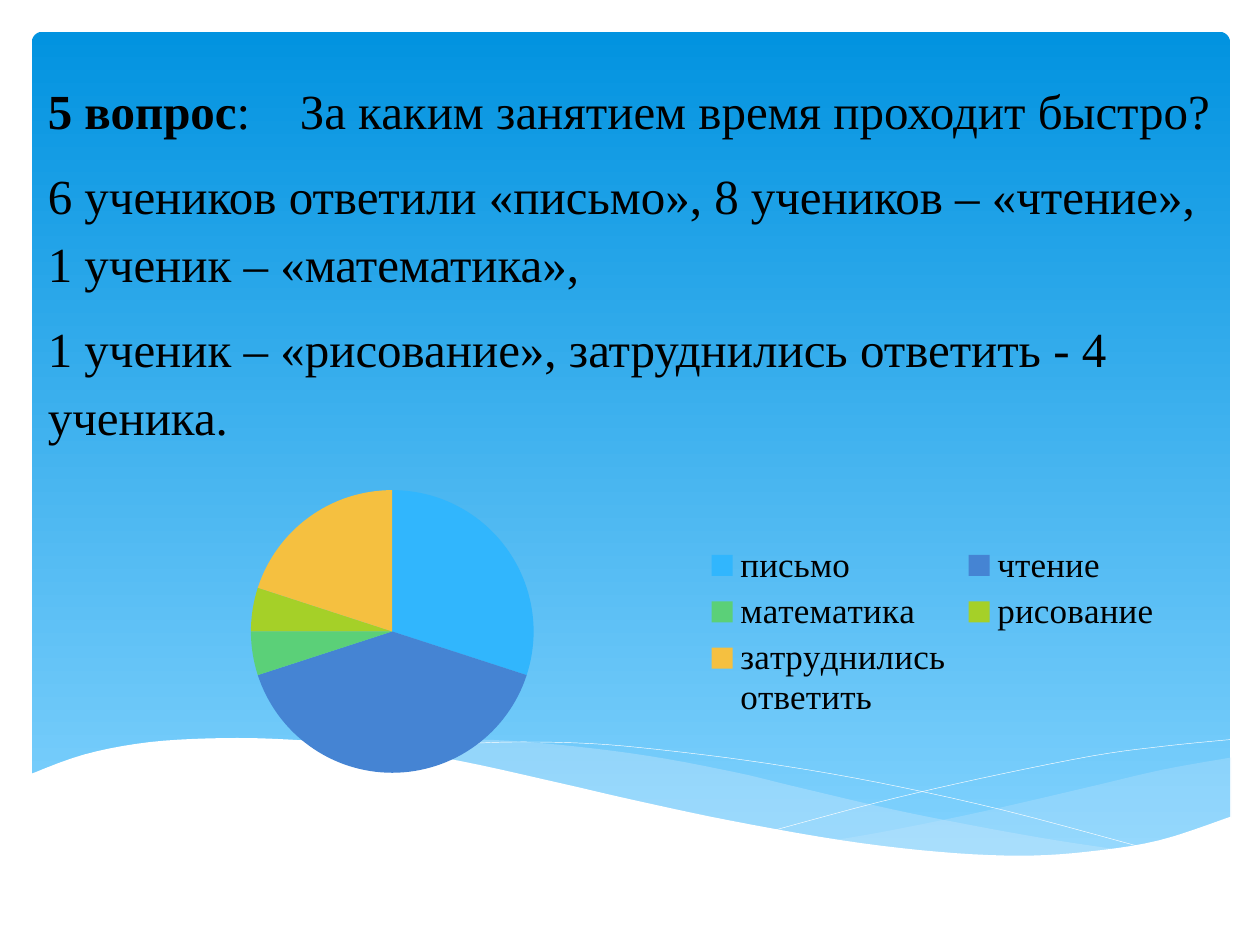
from dataclasses import dataclass

from lxml import etree
from pptx import Presentation
from pptx.chart.data import CategoryChartData
from pptx.dml.color import RGBColor
from pptx.enum import chart as ch, shapes, text
from pptx.oxml.ns import qn
from pptx.util import Cm, Pt

FONT = "Times New Roman"
BLACK = RGBColor(0x00, 0x00, 0x00)
WHITE = RGBColor(0xFF, 0xFF, 0xFF)
SKY_TOP = RGBColor(0x02, 0x93, 0xE0)
SKY_BOTTOM = RGBColor(0x83, 0xD3, 0xFE)
MIST = RGBColor(0xC6, 0xE7, 0xFC)

Point = tuple[float, float]


@dataclass
class Wave:
    """Smooth curves through knots in cm, then straight corners."""
    curves: list[list[Point]]
    corners: tuple[Point, ...] = ()
    fill: RGBColor | None = None
    opacity: int = 100


@dataclass
class Answer:
    name: str
    percent: int
    color: RGBColor


WAVES = [
    Wave([[(24.82, 15.27), (23.42, 15.52), (21.89, 15.88), (19.81, 16.36),
           (17.96, 16.74), (16.81, 16.94)],
          [(16.81, 16.94), (18.26, 17.12), (19.56, 17.25), (20.96, 17.25),
           (22.17, 17.17), (23.42, 16.94), (24.82, 16.48)]],
         fill=MIST, opacity=29),
    Wave([[(7.29, 15.06), (8.33, 14.96), (9.65, 14.91), (11.23, 15.01),
           (13.08, 15.24), (14.83, 15.57), (16, 15.85), (17.96, 16.31),
           (19.71, 16.66), (21.29, 16.94), (22.71, 17.15)],
          [(22.71, 17.15), (21.31, 17.27), (19.96, 17.27), (18.36, 17.17),
           (16.54, 16.92), (14.4, 16.51), (11.43, 15.85), (9.73, 15.47),
           (8.2, 15.19), (7.29, 15.06)]],
         fill=MIST, opacity=40),
    Wave([[(7.87, 15.16), (8.74, 15.04), (10.21, 14.96), (11.91, 14.99),
           (13.54, 15.14), (15.47, 15.39), (17.68, 15.77), (20.22, 16.33),
           (23.06, 17.09)]]),
    Wave([[(15.6, 16.74), (17.68, 16.18), (19.74, 15.7), (22.02, 15.24),
           (23.5, 15.04), (24.8, 14.91)]]),
    Wave([[(24.82, 16.46), (23.37, 16.94), (21.92, 17.17), (20.55, 17.25),
           (18.9, 17.17), (16.97, 16.94), (14.71, 16.54), (12.78, 16.13),
           (11.35, 15.8), (9.27, 15.34), (7.42, 15.04), (5.84, 14.91),
           (4.5, 14.88), (3.02, 14.96), (1.7, 15.21), (0.58, 15.62)]],
         corners=((0.58, 18.57), (24.82, 18.57)), fill=WHITE),
]

ANSWERS = [
    Answer("письмо", 30, RGBColor(0x31, 0xB6, 0xFD)),
    Answer("чтение", 40, RGBColor(0x45, 0x84, 0xD3)),
    Answer("математика", 5, RGBColor(0x5B, 0xD0, 0x78)),
    Answer("рисование", 5, RGBColor(0xA5, 0xD0, 0x28)),
    Answer("затруднились ответить", 20, RGBColor(0xF5, 0xC0, 0x40)),
]

# Each paragraph is a bold lead and the plain text after it.
PARAGRAPHS = [
    ("5 вопрос", ":\tЗа каким занятием время проходит быстро?"),
    ("", "6 учеников ответили «письмо», 8 учеников – «чтение», "
         "1 ученик – «математика»,"),
    ("", "1 ученик – «рисование», затруднились ответить - 4 ученика."),
]


def smooth(knots: list[Point], steps: int = 5) -> list[Point]:
    """Sample a Catmull-Rom spline through the knots."""
    padded = [knots[0], *knots, knots[-1]]
    points = [knots[0]]
    for a, b, c, d in zip(padded, padded[1:], padded[2:], padded[3:]):
        for i in range(1, steps + 1):
            t = i / steps
            points.append(tuple(
                (2 * q + (r - p) * t + (2 * p - 5 * q + 4 * r - s) * t ** 2
                 + (3 * q - p - 3 * r + s) * t ** 3) / 2
                for p, q, r, s in zip(a, b, c, d)))
    return points


def draw_sky(slide) -> None:
    sp = slide.shapes.add_shape(shapes.MSO_SHAPE.ROUNDED_RECTANGLE,
                                Cm(0.64), Cm(0.64), Cm(24.16), Cm(16.76))
    sp.adjustments[0] = 0.013
    sp.shadow.inherit = False
    sp.line.fill.background()
    sp.fill.gradient()
    sp.fill.gradient_angle = 270
    for stop, color in zip(sp.fill.gradient_stops, (SKY_TOP, SKY_BOTTOM)):
        stop.color.rgb = color


def draw_wave(slide, wave: Wave) -> None:
    points = [pt for curve in wave.curves for pt in smooth(curve)]
    points += wave.corners
    (x, y), *rest = [(Cm(px), Cm(py)) for px, py in points]
    builder = slide.shapes.build_freeform(x, y)
    builder.add_line_segments(rest, close=wave.fill is not None)
    sp = builder.convert_to_shape()
    sp.shadow.inherit = False
    if wave.fill is None:
        sp.fill.background()
        sp.line.color.rgb = WHITE
        sp.line.width = Pt(0.25)
        return
    sp.line.fill.background()
    sp.fill.solid()
    sp.fill.fore_color.rgb = wave.fill
    if wave.opacity < 100:
        color = next(sp.element.iter(qn("a:srgbClr")))
        etree.SubElement(color, qn("a:alpha"), val=str(wave.opacity * 1000))


def draw_pie(slide, answers: list[Answer]) -> None:
    data = CategoryChartData()
    data.categories = [a.name for a in answers]
    data.add_series("Ответы", [a.percent for a in answers])
    chart = slide.shapes.add_chart(ch.XL_CHART_TYPE.PIE, Cm(1.7), Cm(9.53),
                                   Cm(22), Cm(6.4), data).chart
    chart.has_title = False
    chart.has_legend = True
    chart.legend.position = ch.XL_LEGEND_POSITION.RIGHT
    chart.legend.include_in_layout = False
    font = chart.legend.font
    font.name, font.size, font.color.rgb = FONT, Pt(20), BLACK
    plot = chart.plots[0]
    plot.vary_by_categories = True
    for i, answer in enumerate(answers):
        fmt = plot.series[0].points[i].format
        fmt.fill.solid()
        fmt.fill.fore_color.rgb = answer.color
        fmt.line.fill.background()


def fill_body(slide, body) -> None:
    body.left, body.top = Cm(0.71), Cm(1.32)
    body.width, body.height = Cm(24.2), Cm(7.85)
    slide.shapes.element.append(body.element)  # bring to front
    tf = body.text_frame
    tf.word_wrap = True
    tf.auto_size = text.MSO_AUTO_SIZE.NONE
    tf.vertical_anchor = text.MSO_ANCHOR.TOP
    for i, (lead, rest) in enumerate(PARAGRAPHS):
        p = tf.add_paragraph() if i else tf.paragraphs[0]
        p.alignment = text.PP_ALIGN.LEFT
        p.line_spacing = 1.15
        p.space_before, p.space_after = Pt(0), Pt(10)
        pPr = p._p.get_or_add_pPr()
        pPr.set("marL", "0")
        pPr.set("indent", "0")
        etree.SubElement(pPr, qn("a:buNone"))
        for words, bold in ((lead, True), (rest, False)):
            if words:
                r = p.add_run()
                r.text = words
                r.font.name, r.font.size, r.font.bold = FONT, Pt(28), bold
                r.font.color.rgb = BLACK


def main() -> None:
    prs = Presentation()
    prs.slide_width, prs.slide_height = Cm(25.4), Cm(19.05)
    slide = prs.slides.add_slide(prs.slide_layouts[1])
    title = slide.shapes.title
    title.element.getparent().remove(title.element)
    draw_sky(slide)
    for wave in WAVES:
        draw_wave(slide, wave)
    draw_pie(slide, ANSWERS)
    fill_body(slide, slide.placeholders[1])
    prs.save("out.pptx")


if __name__ == "__main__":
    main()
